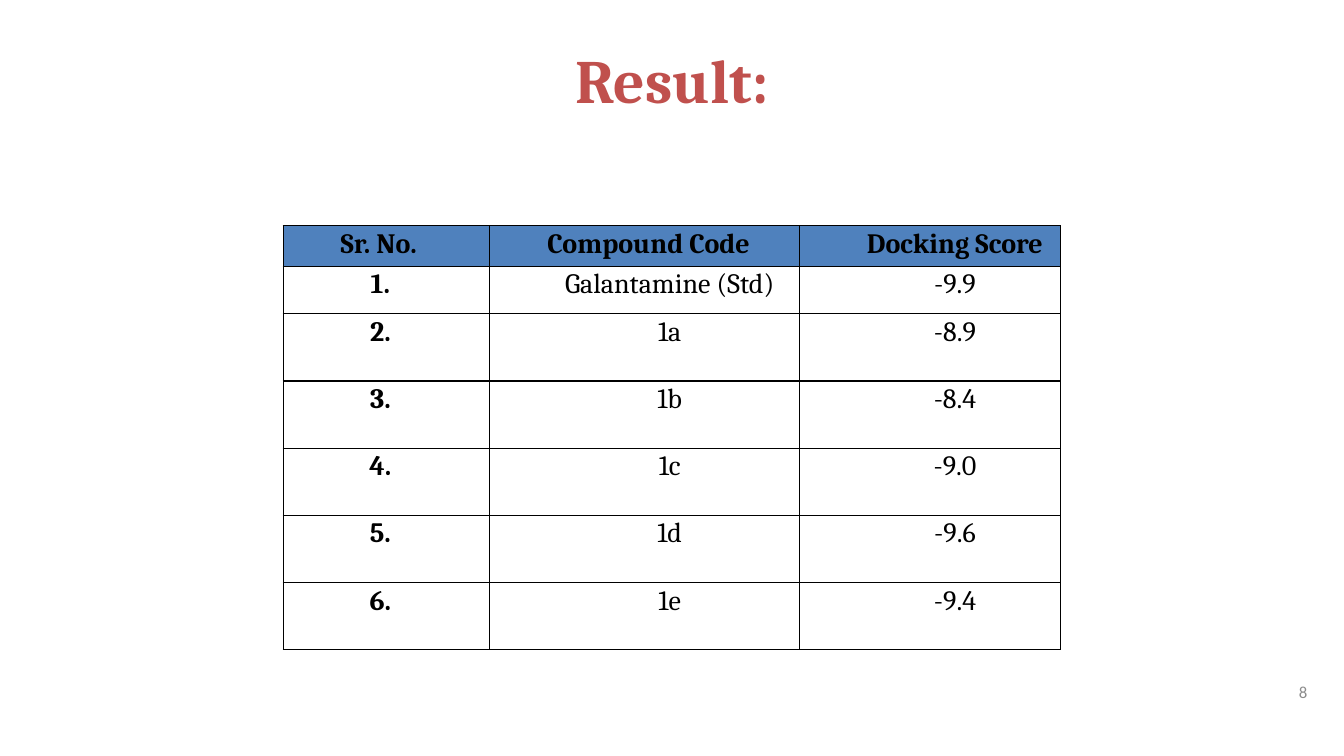
from lxml import etree
from pptx import Presentation
from pptx.dml.color import RGBColor
from pptx.enum import text as t
from pptx.oxml import ns
from pptx.util import Pt

BLACK = "000000"
HEADINGS = ["Sr. No.", "Compound Code", "Docking Score"]
SCORES = [
    ("Galantamine (Std)", "-9.9"),
    ("1a", "-8.9"),
    ("1b", "-8.4"),
    ("1c", "-9.0"),
    ("1d", "-9.6"),
    ("1e", "-9.4"),
]
COLUMN_WIDTHS = [147.6, 221, 186.5]
ROW_HEIGHTS = [29, 34] + [48] * 5


def color(value):
    return RGBColor.from_string(value)


def write(frame, content, size=20, font="Cambria", ink=BLACK, bold=False,
          align=t.PP_ALIGN.CENTER, indent=0, spacing=None, after=None):
    paragraph = frame.paragraphs[0]
    paragraph.alignment = align
    paragraph.line_spacing = spacing
    if after is not None:
        paragraph.space_after = Pt(after)
    if indent:
        properties = paragraph._p.get_or_add_pPr()
        properties.set("marL", str(Pt(indent)))
        properties.set("indent", "0")
    run = paragraph.add_run()
    run.text = content
    run.font.size = Pt(size)
    run.font.name = font
    run.font.bold = bold
    run.font.color.rgb = color(ink)


def add_label(slide, content, left, top, width, height, **style):
    label = slide.shapes.add_textbox(Pt(left), Pt(top), Pt(width), Pt(height))
    frame = label.text_frame
    frame.word_wrap = True
    frame.vertical_anchor = t.MSO_ANCHOR.MIDDLE
    write(frame, content, **style)


def add_borders(cell):
    properties = cell._tc.get_or_add_tcPr()
    for side in ("lnL", "lnR", "lnT", "lnB"):
        line = etree.SubElement(properties, ns.qn(f"a:{side}"), w=str(Pt(1)))
        fill = etree.SubElement(line, ns.qn("a:solidFill"))
        etree.SubElement(fill, ns.qn("a:srgbClr"), val=BLACK)


def fill_cell(cell, content, background, **style):
    cell.margin_left = cell.margin_right = Pt(5)
    cell.margin_top = cell.margin_bottom = 0
    add_borders(cell)
    if background:
        cell.fill.solid()
        cell.fill.fore_color.rgb = color(background)
    else:
        cell.fill.background()
    write(cell.text_frame, content, spacing=1.07, **style)


def add_score_table(slide):
    rows = [HEADINGS] + [
        (f"{number}.  ", code, score)
        for number, (code, score) in enumerate(SCORES, 1)
    ]
    scores = slide.shapes.add_table(
        len(rows), len(HEADINGS), Pt(202.3), Pt(161.2),
        Pt(sum(COLUMN_WIDTHS)), Pt(sum(ROW_HEIGHTS))).table
    for column, width in zip(scores.columns, COLUMN_WIDTHS):
        column.width = Pt(width)
    for row, height in zip(scores.rows, ROW_HEIGHTS):
        row.height = Pt(height)
    for r, row in enumerate(rows):
        heading = r == 0
        for c, content in enumerate(row):
            fill_cell(
                scores.cell(r, c), content, "4F81BD" if heading else None,
                bold=heading or c == 0,
                align=t.PP_ALIGN.LEFT if heading and c < 2 else t.PP_ALIGN.CENTER,
                indent=36 if heading or c > 0 else 0,
                after=8 if c == 2 else 0)


def main():
    presentation = Presentation()
    presentation.slide_width = Pt(960)
    presentation.slide_height = Pt(540)
    slide = presentation.slides.add_slide(presentation.slide_layouts[6])
    add_score_table(slide)
    add_label(slide, "Result:", 141.8, 24.5, 676.8, 63.4,
              size=44, ink="C0504D", bold=True)
    add_label(slide, "8", 717, 479.5, 224, 28.8, size=12, font="Calibri",
              ink="8C8C8C", align=t.PP_ALIGN.RIGHT)
    presentation.save("out.pptx")


if __name__ == "__main__":
    main()
